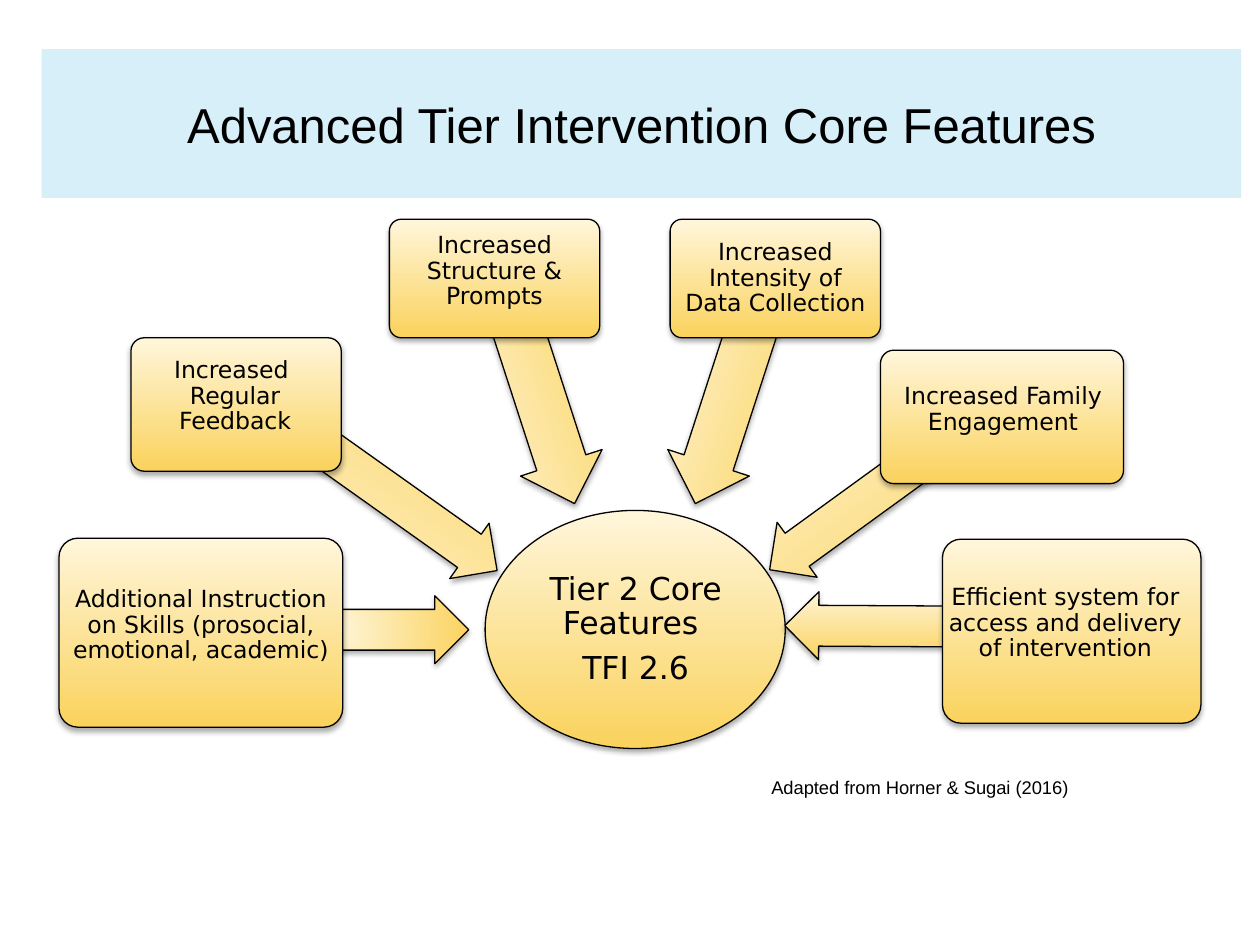
from dataclasses import dataclass

from lxml import etree
from pptx import Presentation
from pptx import util as u
from pptx.dml.color import RGBColor
from pptx.enum import shapes, text
from pptx.oxml.ns import qn


@dataclass(frozen=True)
class Theme:
    ink: str = "000000"
    light: str = "FFF6DB"
    gold: str = "FAD25C"
    band: str = "7DCCED"
    band_alpha: int = 31
    shadow_alpha: int = 33
    heading_font: str = "Arial"
    diagram_font: str = "DejaVu Sans"
    title: float = 28
    hub: float = 18
    label: float = 13.5
    credit: float = 10.5


def rgb(value):
    return RGBColor.from_string(value)


def add_xml(parent, tag, **attrs):
    return etree.SubElement(parent, qn(tag), {k: str(v) for k, v in attrs.items()})


class Deck:
    def __init__(self, prs, theme):
        self.theme = theme
        self.slide = prs.slides.add_slide(prs.slide_layouts[6])

    def golden(self, kind, at, adjust=(), rotation=0, radial=False):
        """Outlined shape with a golden gradient and a soft shadow."""
        sp = self.slide.shapes.add_shape(kind, *map(u.Cm, at))
        sp.rotation = rotation
        for i, value in enumerate(adjust):
            sp.adjustments[i] = value
        sp.fill.gradient()
        sp.fill.gradient_angle = 270
        for stop, colour in zip(sp.fill.gradient_stops, (self.theme.light, self.theme.gold)):
            stop.color.rgb = rgb(colour)
        if radial:
            grad = sp._element.spPr.find(qn("a:gradFill"))
            grad.remove(grad.find(qn("a:lin")))
            circle = add_xml(grad, "a:path", path="circle")
            add_xml(circle, "a:fillToRect", l=50000, t=50000, r=50000, b=50000)
        sp.line.color.rgb = rgb(self.theme.ink)
        sp.line.width = u.Pt(0.75)
        sp.shadow.inherit = False
        effects = sp._element.spPr.find(qn("a:effectLst"))
        shadow = add_xml(effects, "a:outerShdw", blurRad=u.Pt(3.1), dist=u.Pt(1.8),
                         dir=90 * 60000, rotWithShape=0)
        colour = add_xml(shadow, "a:srgbClr", val=self.theme.ink)
        add_xml(colour, "a:alpha", val=self.theme.shadow_alpha * 1000)

    def set_text(self, sp, lines, size, font, insets, align=text.PP_ALIGN.CENTER,
                 anchor=text.MSO_ANCHOR.MIDDLE, spacing=None, before=0):
        tf = sp.text_frame
        tf.word_wrap = True
        tf.vertical_anchor = anchor
        tf.margin_left = tf.margin_right = u.Cm(insets[0])
        tf.margin_top = tf.margin_bottom = u.Cm(insets[1])
        tf.text = lines
        for i, p in enumerate(tf.paragraphs):
            p.alignment = align
            p.line_spacing = spacing
            p.space_before = u.Pt(before if i else 0)
            for r in p.runs:
                r.font.size = u.Pt(size)
                r.font.name = font
                r.font.color.rgb = rgb(self.theme.ink)

    def text_box(self, at, lines, size, font, insets, **style):
        sp = self.slide.shapes.add_textbox(*map(u.Cm, at))
        self.set_text(sp, lines, size, font, insets, **style)

    def hub(self, at, text_at, lines):
        self.golden(shapes.MSO_SHAPE.OVAL, at)
        self.text_box(text_at, lines, self.theme.hub, self.theme.diagram_font,
                      (0.03, 0.03), spacing=0.9, before=6.3)

    def feature(self, lines, box, text_at, arrow, rotation):
        """Arrow to the hub, with a labelled box over its tail."""
        self.golden(shapes.MSO_SHAPE.LEFT_ARROW, arrow, (0.6, 0.5), rotation,
                    radial=rotation == 180)
        self.golden(shapes.MSO_SHAPE.ROUNDED_RECTANGLE, box, (0.1,))
        self.text_box(text_at, lines, self.theme.label, self.theme.diagram_font,
                      (0.1, 0.1), spacing=0.9)

    def credit(self, at, line):
        self.text_box(at, line, self.theme.credit, self.theme.heading_font, (0.18, 0.1),
                      align=text.PP_ALIGN.LEFT, anchor=text.MSO_ANCHOR.TOP)

    def title(self, at, line):
        sp = self.slide.shapes.add_shape(shapes.MSO_SHAPE.RECTANGLE, *map(u.Cm, at))
        sp.shadow.inherit = False
        sp.line.fill.background()
        sp.fill.solid()
        sp.fill.fore_color.rgb = rgb(self.theme.band)
        colour = sp._element.spPr.find(qn("a:solidFill"))[0]
        add_xml(colour, "a:alpha", val=self.theme.band_alpha * 1000)
        self.set_text(sp, line, self.theme.title, self.theme.heading_font, (0.18, 0.1))


# Label, box, label area, arrow (left, top, width, height in cm), arrow rotation
FEATURES = [
    ("Additional Instruction on Skills (prosocial, emotional, academic)",
     (1.19, 10.85, 5.72, 3.81), (1.19, 10.57, 5.72, 4.09), (4.04, 12.01, 5.41, 1.37), 180),
    ("Increased \nRegular Feedback",
     (2.64, 6.81, 4.24, 2.69), (2.72, 6.88, 4.04, 2.24), (4.14, 8.94, 6.48, 1.37), 215.4),
    ("Increased Structure & Prompts",
     (7.85, 4.42, 4.24, 2.39), (7.95, 4.5, 4.04, 1.96), (8.56, 7.09, 4.62, 1.73), 252),
    ("Increased Intensity of Data Collection",
     (13.51, 4.42, 4.24, 2.39), (13.61, 4.5, 4.04, 2.24), (12.42, 7.09, 4.62, 1.73), 288),
    ("Increased Family Engagement",
     (17.75, 7.06, 4.9, 2.69), (17.86, 7.14, 4.72, 2.24), (14.96, 9.09, 5.82, 1.37), 324),
    ("Efficient system for access and delivery of intervention",
     (19, 10.87, 5.21, 3.71), (19, 10.97, 4.95, 3.2), (15.82, 11.94, 5.46, 1.37), 0.3),
]


def main():
    prs = Presentation()
    prs.slide_width, prs.slide_height = u.Cm(25.4), u.Cm(19.05)
    deck = Deck(prs, Theme())

    # Hub and the features that point to it
    deck.hub((9.78, 10.29, 6.05, 4.8), (10.67, 11, 4.29, 3.4),
             "Tier 2 Core Features \nTFI 2.6")
    for feature in FEATURES:
        deck.feature(*feature)

    # Credit and title
    deck.credit((15.37, 15.54, 9.35, 0.51), "Adapted from Horner & Sugai (2016)")
    deck.title((0.84, 0.99, 24.18, 3), "Advanced Tier Intervention Core Features")

    prs.save("out.pptx")


if __name__ == "__main__":
    main()
